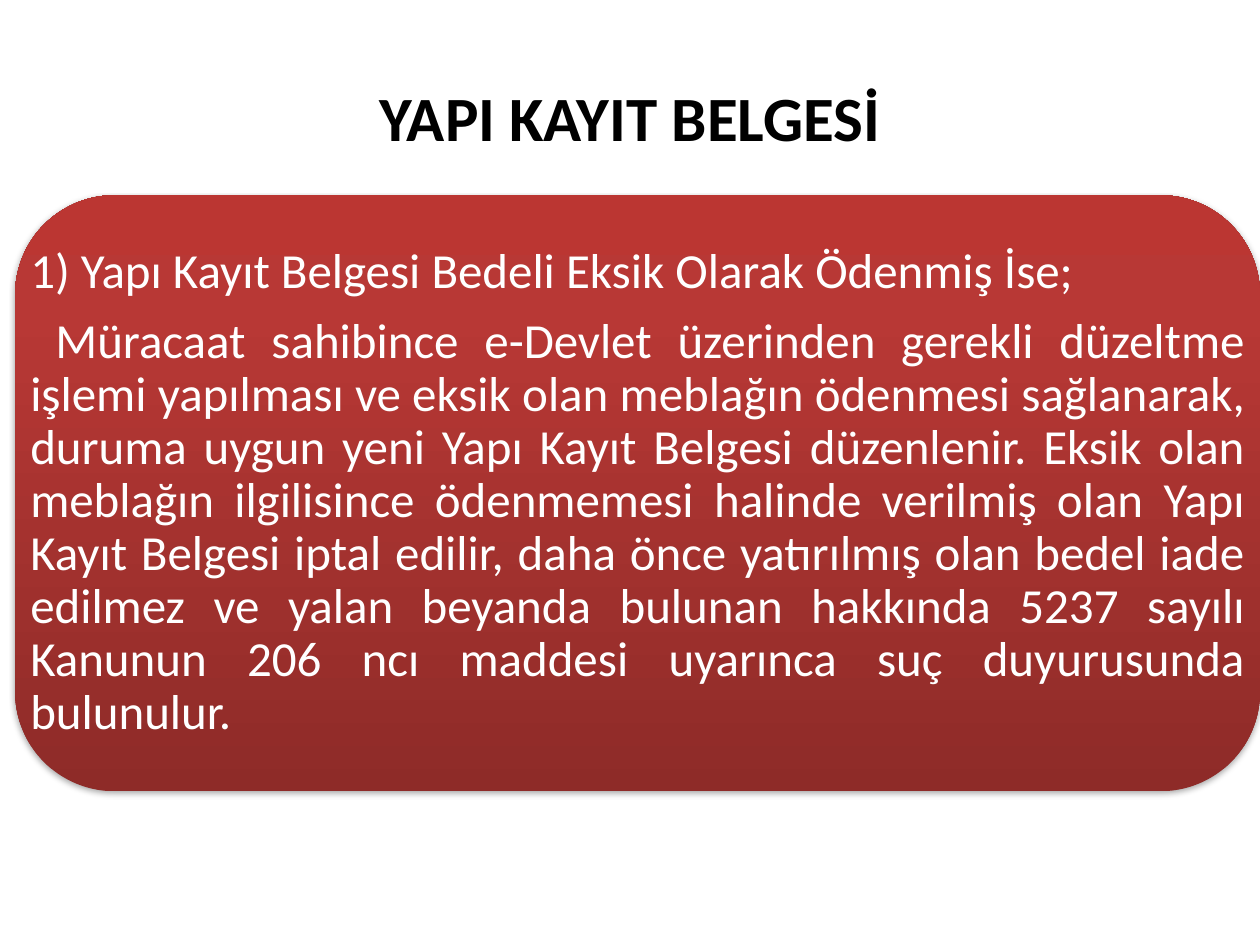
from copy import deepcopy

from lxml import etree
from pptx import Presentation
from pptx.dml.color import RGBColor
from pptx.enum.shapes import MSO_SHAPE
from pptx.enum.text import MSO_ANCHOR, PP_ALIGN
from pptx.oxml.ns import qn
from pptx.util import Inches, Pt

ROUNDED = MSO_SHAPE.ROUNDED_RECTANGLE
MIDDLE = MSO_ANCHOR.MIDDLE
CENTER, JUSTIFY = PP_ALIGN.CENTER, PP_ALIGN.JUSTIFY
TITLE_ONLY = 5

WHITE = RGBColor(0xFF, 0xFF, 0xFF)
BLACK = RGBColor(0x00, 0x00, 0x00)
OUTLINE_BLUE = RGBColor(0x05, 0x46, 0x97)
RED_STOPS = [
    (0, RGBColor(0x8E, 0x2B, 0x28)),
    (0.8, RGBColor(0xB8, 0x38, 0x35)),
    (1, RGBColor(0xBB, 0x36, 0x32)),
]

WIDTH, HEIGHT = Inches(10), Inches(7.5)
TITLE_BOX = (Inches(0.5), Inches(0.3), Inches(9), Inches(1.25))
PANEL_BOX = (Inches(0.12), Inches(1.55), Inches(9.88), Inches(4.73))

TITLE_FONT = {"name": "Calibri", "size": Pt(36), "bold": True}
BODY_FONT = {"name": "Calibri", "size": Pt(28)}
BODY_PARAGRAPH = {"alignment": JUSTIFY, "line_spacing": 0.9, "space_after": Pt(9.8)}
BODY_FRAME = {
    "word_wrap": True,
    "vertical_anchor": MIDDLE,
    **{f"margin_{side}": Inches(0.12) for side in ("left", "top", "right", "bottom")},
}

TITLE = "YAPI KAYIT BELGESİ"
# Each paragraph: text and first-line indent
PARAGRAPHS = [
    ("1) Yapı Kayıt Belgesi Bedeli Eksik Olarak Ödenmiş İse;", 0),
    ("Müracaat sahibince e-Devlet üzerinden gerekli düzeltme işlemi yapılması "
     "ve eksik olan meblağın ödenmesi sağlanarak, duruma uygun yeni Yapı Kayıt "
     "Belgesi düzenlenir. Eksik olan meblağın ilgilisince ödenmemesi halinde "
     "verilmiş olan Yapı Kayıt Belgesi iptal edilir, daha önce yatırılmış olan "
     "bedel iade edilmez ve yalan beyanda bulunan hakkında 5237 sayılı Kanunun "
     "206 ncı maddesi uyarınca suç duyurusunda bulunulur.", Inches(0.2)),
]


def apply_format(target, values):
    for name, value in values.items():
        setattr(target, name, value)


def place(shape, box):
    shape.left, shape.top, shape.width, shape.height = box


def add_color(parent, color, alpha=None):
    element = etree.SubElement(parent, qn("a:srgbClr"), val=str(color))
    if alpha is not None:
        etree.SubElement(element, qn("a:alpha"), val=str(int(alpha * 100000)))


def fill_gradient(shape, stops):
    """Fill from bottom to top with any number of colour stops."""
    shape.fill.gradient()
    shape.fill.gradient_angle = 90
    stop_list = next(shape.element.spPr.iter(qn("a:gsLst")))
    while len(stop_list) < len(stops):
        stop_list.append(deepcopy(stop_list[0]))
    for stop, (position, color) in zip(shape.fill.gradient_stops, stops):
        stop.position = position
        stop.color.rgb = color


def add_soft_shadow(shape):
    effects = etree.SubElement(shape.element.spPr, qn("a:effectLst"))
    shadow = etree.SubElement(
        effects, qn("a:outerShdw"), blurRad=str(Pt(3.1)), dist=str(Pt(1.8)),
        dir=str(90 * 60000), rotWithShape="0")
    add_color(shadow, BLACK, 0.35)


def build_title(slide, box):
    title = slide.shapes.title
    place(title, box)
    title.text_frame.vertical_anchor = MIDDLE
    paragraph = title.text_frame.paragraphs[0]
    paragraph.alignment = CENTER
    run = paragraph.add_run()
    run.text = TITLE
    apply_format(run.font, TITLE_FONT)
    run.font.color.rgb = BLACK
    outline = etree.Element(qn("a:ln"), w=str(Pt(1)))
    add_color(etree.SubElement(outline, qn("a:solidFill")), OUTLINE_BLUE)
    run._r.get_or_add_rPr().insert(0, outline)


def build_panel(slide, box):
    """Red rounded panel with its text across the full width."""
    panel = slide.shapes.add_shape(ROUNDED, *box)
    fill_gradient(panel, RED_STOPS)
    panel.line.fill.background()
    add_soft_shadow(panel)

    frame = slide.shapes.add_textbox(*box).text_frame
    apply_format(frame, BODY_FRAME)
    for index, (text, indent) in enumerate(PARAGRAPHS):
        paragraph = frame.add_paragraph() if index else frame.paragraphs[0]
        apply_format(paragraph, BODY_PARAGRAPH)
        paragraph._p.get_or_add_pPr().set("indent", str(indent))
        run = paragraph.add_run()
        run.text = text
        apply_format(run.font, BODY_FONT)
        run.font.color.rgb = WHITE


def main():
    presentation = Presentation()
    presentation.slide_width, presentation.slide_height = WIDTH, HEIGHT
    slide = presentation.slides.add_slide(presentation.slide_layouts[TITLE_ONLY])
    build_title(slide, TITLE_BOX)
    build_panel(slide, PANEL_BOX)
    presentation.save("out.pptx")


if __name__ == "__main__":
    main()
